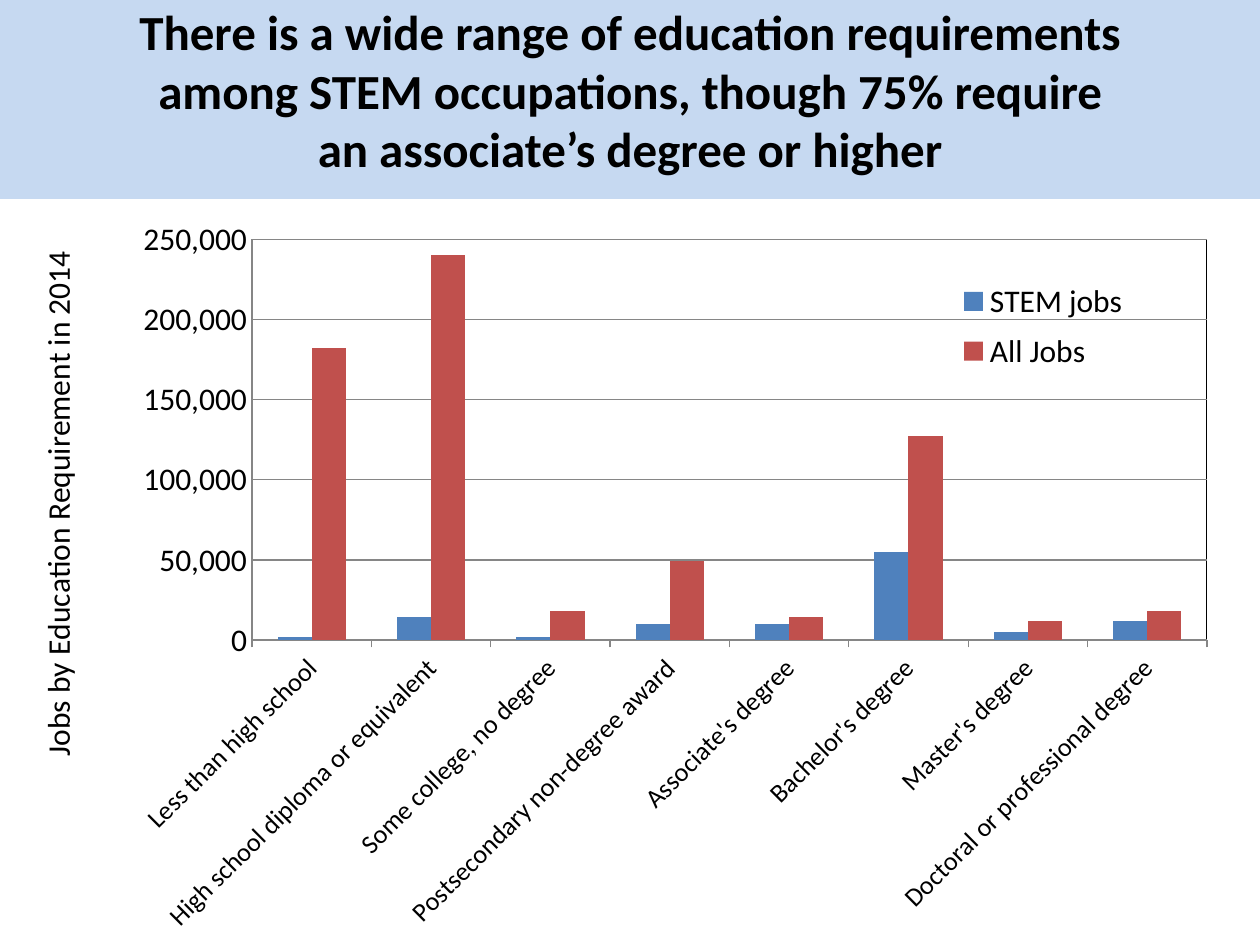
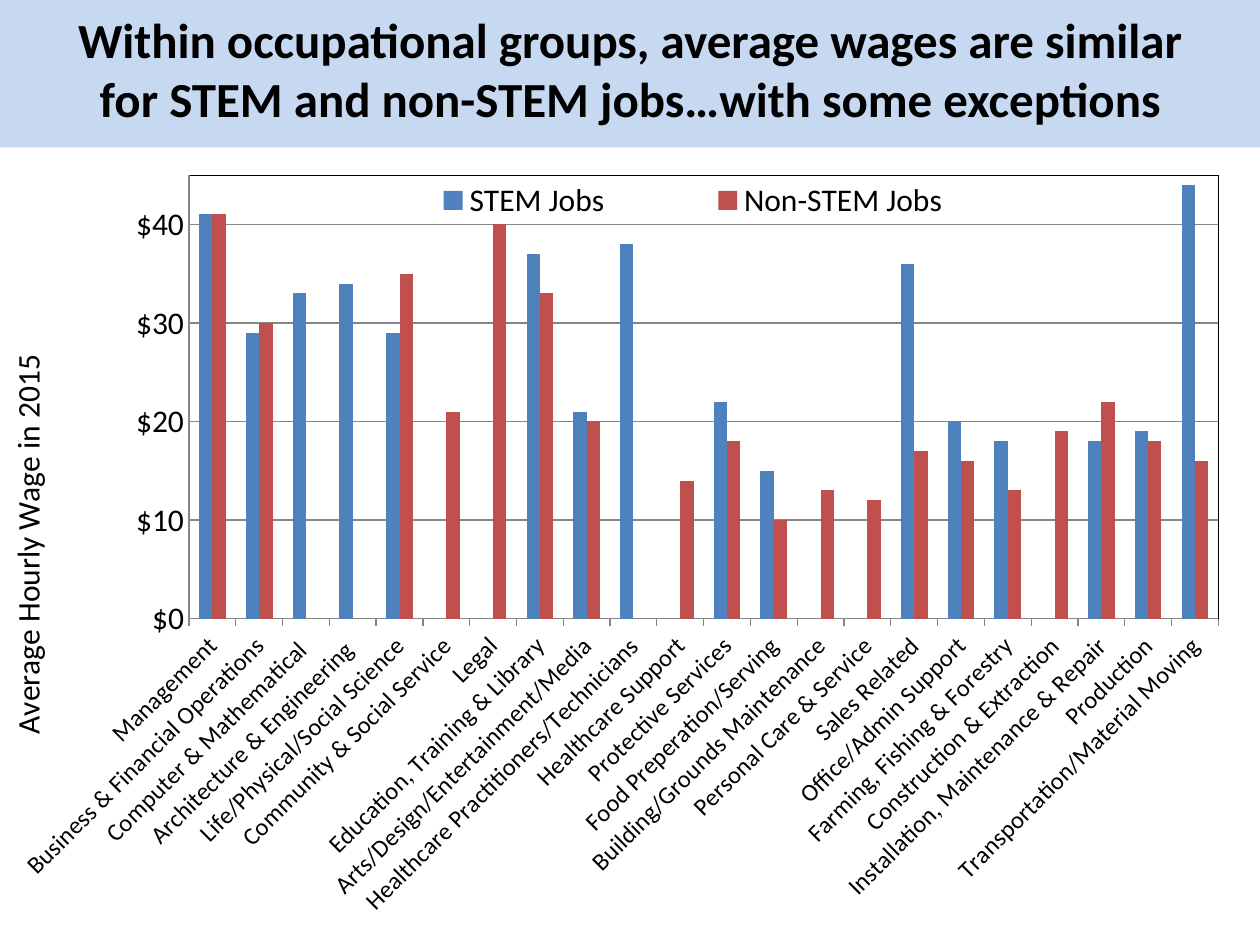
from lxml import etree
from pptx import Presentation, util as u
from pptx.chart import data as cd
from pptx.dml import color as dml
from pptx.enum import chart as ec, text
from pptx.oxml import parse_xml
from pptx.oxml.ns import nsdecls, qn

FONT = "Calibri"
HEX = {"band": "C6D9F1", "paper": "FFFFFF", "ink": "000000",
       "grid": "868686", "stem": "4F81BD", "other": "C0504D"}

NEEDS = [
    ("Less than high school", 2000, 182000),
    ("High school diploma or equivalent", 14000, 240000),
    ("Some college, no degree", 2000, 18000),
    ("Postsecondary non-degree award", 10000, 49000),
    ("Associate's degree", 10000, 14000),
    ("Bachelor's degree", 55000, 127000),
    ("Master's degree", 5000, 12000),
    ("Doctoral or professional degree", 12000, 18000),
]
WAGES = [
    ("Management", 41, 41),
    ("Business & Financial Operations", 29, 30),
    ("Computer & Mathematical ", 33, None),
    ("Architecture & Engineering ", 34, None),
    ("Life/Physical/Social Science", 29, 35),
    ("Community & Social Service", None, 21),
    ("Legal", None, 40),
    ("Education, Training & Library", 37, 33),
    ("Arts/Design/Entertainment/Media", 21, 20),
    ("Healthcare Practitioners/Technicians", 38, None),
    ("Healthcare Support", None, 14),
    ("Protective Services", 22, 18),
    ("Food Preperation/Serving", 15, 10),
    ("Building/Grounds Maintenance", None, 13),
    ("Personal Care & Service", None, 12),
    ("Sales Related", 36, 17),
    ("Office/Admin Support", 20, 16),
    ("Farming, Fishing & Forestry", 18, 13),
    ("Construction & Extraction", None, 19),
    ("Installation, Maintenance & Repair", 18, 22),
    ("Production", 19, 18),
    ("Transportation/Material Moving", 44, 16),
]


def rgb(name):
    return dml.RGBColor.from_string(HEX[name])


def style(font, size, bold=False):
    font.name = FONT
    font.size = u.Pt(size)
    font.bold = bold
    font.color.rgb = rgb("ink")


def box(left, top, width, height):
    return [u.Inches(n) for n in (left, top, width, height)]


def add_title(slide, words, place):
    title = slide.shapes.title
    title.left, title.top, title.width, title.height = box(*place)
    frame = title.text_frame
    frame.word_wrap = True
    frame.auto_size = text.MSO_AUTO_SIZE.NONE
    frame.vertical_anchor = text.MSO_ANCHOR.MIDDLE
    para = frame.paragraphs[0]
    para.alignment = text.PP_ALIGN.CENTER
    run = para.add_run()
    run.text = words
    style(run.font, 28, True)


def lay_out(node, spot, place, inner=False):
    for old in node.findall(qn("c:layout")):
        node.remove(old)
    layout = parse_xml(f"<c:layout {nsdecls('c')}><c:manualLayout/></c:layout>")
    wide, high = place[2:]
    marks = [("layoutTarget", "inner")] if inner else []
    marks += [("xMode", "edge"), ("yMode", "edge")]
    marks += [(tag, n / size) for tag, n, size in zip("xywh", spot, (wide, high) * 2)]
    for tag, val in marks:
        etree.SubElement(layout[0], qn(f"c:{tag}")).set("val", str(val))
    if inner:
        node.insert(0, layout)
    else:
        node.find(qn("c:overlay")).addprevious(layout)


def paint(chart):
    space = chart._chartSpace
    back = parse_xml(
        f'<c:spPr {nsdecls("c", "a")}><a:solidFill><a:srgbClr val="{HEX["paper"]}"/>'
        '</a:solidFill><a:ln><a:noFill/></a:ln></c:spPr>')
    space.find(qn("c:chart")).addnext(back)
    frame = parse_xml(
        f'<c:spPr {nsdecls("c", "a")}><a:noFill/><a:ln w="0"><a:solidFill>'
        f'<a:srgbClr val="{HEX["ink"]}"/></a:solidFill></a:ln></c:spPr>')
    space.find(".//" + qn("c:plotArea")).append(frame)


def set_line(line):
    line.color.rgb = rgb("grid")
    line.width = u.Pt(0.75)


def set_cats(axis, size):
    axis.major_tick_mark = ec.XL_TICK_MARK.OUTSIDE
    style(axis.tick_labels.font, size)
    axis._element.find(qn("c:txPr")).find(qn("a:bodyPr")).set("rot", "-2700000")
    set_line(axis.format.line)


def set_vals(axis, words, spot, place, form, top, step):
    axis.minimum_scale, axis.maximum_scale, axis.major_unit = 0, top, step
    axis.major_tick_mark = ec.XL_TICK_MARK.NONE
    axis.has_major_gridlines = True
    set_line(axis.major_gridlines.format.line)
    set_line(axis.format.line)
    labels = axis.tick_labels
    labels.number_format, labels.number_format_is_linked = form, False
    style(labels.font, 18)
    title = axis.axis_title
    run = title.text_frame.paragraphs[0].add_run()
    run.text = words
    style(run.font, 18)
    turn = title._element.find(".//" + qn("a:bodyPr"))
    turn.set("rot", "-5400000")
    turn.set("vert", "horz")
    lay_out(title._element, spot, place)


def set_key(chart, spot, place):
    chart.has_legend = True
    key = chart.legend
    key.position = ec.XL_LEGEND_POSITION.RIGHT
    key.include_in_layout = True
    style(key.font, 18)
    lay_out(key._element, spot, place)


def add_bars(slide, place, rows, names, form, plot):
    cats, *sets = zip(*rows)
    data = cd.CategoryChartData(number_format=form)
    data.categories = cats
    for name, vals in zip(names, sets):
        data.add_series(name, vals)
    chart = slide.shapes.add_chart(
        ec.XL_CHART_TYPE.COLUMN_CLUSTERED, *box(*place), data).chart
    style(chart.font, 10)
    chart.has_title = False
    bars = chart.plots[0]
    bars.gap_width, bars.overlap, bars.vary_by_categories = 150, 0, False
    for part, shade in zip(bars.series, ("stem", "other")):
        part.format.fill.solid()
        part.format.fill.fore_color.rgb = rgb(shade)
        part.invert_if_negative = False
    paint(chart)
    lay_out(chart._chartSpace.find(".//" + qn("c:plotArea")), plot, place, True)
    return chart


def main():
    deck = Presentation()
    deck.slide_width, deck.slide_height = u.Inches(10), u.Inches(7.5)
    fill = deck.slide_master.background.fill
    fill.solid()
    fill.fore_color.rgb = rgb("band")
    only = deck.slide_layouts[5]

    slide = deck.slides.add_slide(only)
    add_title(slide, "There is a wide range of education requirements among STEM "
              "occupations, though 75% require an associate’s degree or higher",
              (0.95, 0.25, 8.1, 0.92))
    form, place = "#,##0", (0, 1.58, 10, 5.93)
    chart = add_bars(slide, place, NEEDS, ("STEM jobs", "All Jobs"),
                     form, (2, 0.32, 7.58, 3.18))
    set_cats(chart.category_axis, 15)
    set_vals(chart.value_axis, "Jobs by Education Requirement in 2014",
             (0.24, 0.37), place, form, 250000, 50000)
    set_key(chart, (7.48, 0.57, 1.6, 0.88), place)

    slide = deck.slides.add_slide(only)
    add_title(slide, "Within occupational groups, average wages are similar for STEM "
              "and non-STEM jobs…with some exceptions", (0.25, 0.25, 9.5, 0.58))
    form, place = '"$"#,##0', (0, 1.17, 10, 6.33)
    chart = add_bars(slide, place, WAGES, ("STEM Jobs", "Non-STEM Jobs"),
                     form, (1.5, 0.22, 8.17, 3.52))
    set_cats(chart.category_axis, 14)
    set_vals(chart.value_axis, "Average Hourly Wage in 2015",
             (0, 1.6), place, form, 45, 10)
    set_key(chart, (2.7, 0.23, 5.6, 0.38), place)

    deck.save("out.pptx")


if __name__ == "__main__":
    main()
